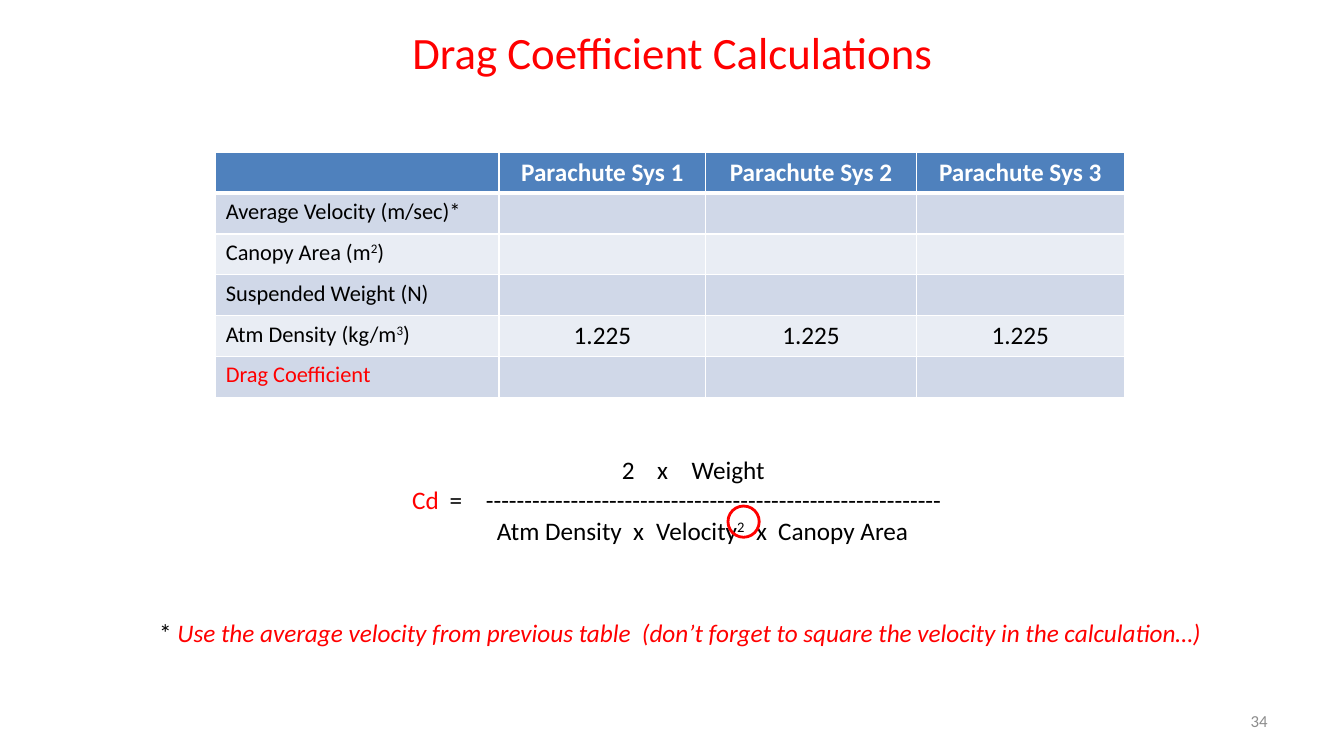
"""Build the drag coefficient calculation slide."""
from dataclasses import dataclass

import lxml.etree
import pptx
import pptx.dml.color
import pptx.enum.shapes
import pptx.enum.text
import pptx.oxml.ns
import pptx.util

Inches = pptx.util.Inches
Pt = pptx.util.Pt
RGBColor = pptx.dml.color.RGBColor
ALIGN = pptx.enum.text.PP_ALIGN
ANCHOR = pptx.enum.text.MSO_ANCHOR
qn = pptx.oxml.ns.qn

FONT = "Calibri"
RED = RGBColor(0xFF, 0x00, 0x00)
BLACK = RGBColor(0x00, 0x00, 0x00)
WHITE = RGBColor(0xFF, 0xFF, 0xFF)
GRAY = RGBColor(0x8C, 0x8C, 0x8C)
HEADER_BLUE = RGBColor(0x4F, 0x81, 0xBD)
BANDS = (RGBColor(0xE9, 0xED, 0xF4), RGBColor(0xD0, 0xD8, 0xE8))

COLUMN_WIDTHS = (2.81, 2.05, 2.09, 2.06)
ROW_HEIGHT = 0.405


@dataclass(frozen=True)
class Span:
    text: str
    color: RGBColor = BLACK
    size: float = 18
    bold: bool = False
    italic: bool = False
    raised: bool = False


@dataclass(frozen=True)
class Line:
    spans: tuple[Span, ...]
    align: ALIGN = ALIGN.LEFT
    tabs: tuple[float, ...] = ()
    hanging: float = 0


@dataclass(frozen=True)
class TextBox:
    left: float
    top: float
    width: float
    height: float
    lines: tuple[Line, ...]
    anchor: ANCHOR = ANCHOR.TOP


def label(text: str, exponent: str = "", color: RGBColor = BLACK) -> Line:
    """Return a row label, closing the bracket after any exponent."""
    spans = (Span(text, color, 16),)
    if exponent:
        spans += (Span(exponent, size=16, raised=True), Span(")", size=16))
    return Line(spans)


TEXT_BOXES = (
    TextBox(2.17, 0.17, 9, 0.69,
            (Line((Span("Drag Coefficient Calculations", RED, 32),), ALIGN.CENTER),),
            ANCHOR.MIDDLE),
    TextBox(9.56, 6.95, 3.11, 0.4,
            (Line((Span("34", GRAY, 12),), ALIGN.RIGHT),), ANCHOR.MIDDLE),
    TextBox(3.99, 4.46, 5.59, 1.01, (
        Line((Span("\t2\tx\tWeight"),), tabs=(2.08, 2.43, 2.77)),
        Line((Span("Cd", RED), Span("\t=\t" + "-" * 59)), tabs=(0.37, 0.73)),
        Line((Span("\tAtm Density\tx\tVelocity"), Span("2", raised=True),
              Span("\tx\tCanopy Area")), tabs=(0.84, 2.19, 2.42, 3.41, 3.63)),
    )),
    TextBox(1.48, 6.08, 11.18, 0.4, (
        Line((Span("* "),
              Span("Use the average velocity from previous table  (don’t forget "
                   "to square the velocity in the calculation…)", RED, italic=True)),
             hanging=0.19),
    )),
)

HEADINGS = tuple(
    Line((Span(f"Parachute Sys {number}", WHITE, bold=True),), ALIGN.CENTER)
    for number in (1, 2, 3)
)
DENSITY = Line((Span("1.225"),), ALIGN.CENTER)
EMPTY = Line(())
TABLE_ROWS = (
    (EMPTY, *HEADINGS),
    (label("Average Velocity (m/sec)*"), EMPTY, EMPTY, EMPTY),
    (label("Canopy Area (m", "2"), EMPTY, EMPTY, EMPTY),
    (label("Suspended Weight (N)"), EMPTY, EMPTY, EMPTY),
    (label("Atm Density (kg/m", "3"), DENSITY, DENSITY, DENSITY),
    (label("Drag Coefficient", color=RED), EMPTY, EMPTY, EMPTY),
)


def write_line(para, line: Line) -> None:
    """Fill one paragraph with the spans of a line."""
    para.alignment = line.align
    properties = para._p.get_or_add_pPr()
    if line.hanging:
        properties.set("marL", str(Inches(line.hanging)))
        properties.set("indent", str(-Inches(line.hanging)))
    if line.tabs:
        tab_list = lxml.etree.SubElement(properties, qn("a:tabLst"))
        for position in line.tabs:
            lxml.etree.SubElement(tab_list, qn("a:tab"),
                                  pos=str(Inches(position)), algn="l")
    for span in line.spans:
        run = para.add_run()
        run.text = span.text
        run.font.name = FONT
        run.font.size = Pt(span.size)
        run.font.bold = span.bold
        run.font.italic = span.italic
        run.font.color.rgb = span.color
        if span.raised:
            run.font._element.set("baseline", "30000")


def add_text_box(page, item: TextBox) -> None:
    """Add a wrapped text box."""
    box = page.shapes.add_textbox(Inches(item.left), Inches(item.top),
                                  Inches(item.width), Inches(item.height))
    frame = box.text_frame
    frame.word_wrap = True
    frame.vertical_anchor = item.anchor
    for index, line in enumerate(item.lines):
        write_line(frame.add_paragraph() if index else frame.paragraphs[0], line)


def set_borders(cell, row_number: int) -> None:
    """Draw white cell edges, thicker below the header row."""
    properties = cell._tc.get_or_add_tcPr()
    thick_edge = {0: "lnB", 1: "lnT"}.get(row_number)
    for edge in ("lnL", "lnR", "lnT", "lnB"):
        width = Pt(3 if edge == thick_edge else 1)
        border = lxml.etree.SubElement(properties, qn(f"a:{edge}"), w=str(width))
        fill = lxml.etree.SubElement(border, qn("a:solidFill"))
        lxml.etree.SubElement(fill, qn("a:srgbClr"), val=str(WHITE))


def add_drag_table(page) -> None:
    """Add the table of parachute systems."""
    row_count = len(TABLE_ROWS)
    table = page.shapes.add_table(
        row_count, len(COLUMN_WIDTHS), Inches(2.14), Inches(1.51),
        Inches(sum(COLUMN_WIDTHS)), Inches(ROW_HEIGHT * row_count)).table
    for column, width in zip(table.columns, COLUMN_WIDTHS):
        column.width = Inches(width)
    for row_number, lines in enumerate(TABLE_ROWS):
        table.rows[row_number].height = Inches(ROW_HEIGHT)
        for column_number, line in enumerate(lines):
            cell = table.cell(row_number, column_number)
            set_borders(cell, row_number)
            cell.fill.solid()
            cell.fill.fore_color.rgb = BANDS[row_number % 2] if row_number else HEADER_BLUE
            write_line(cell.text_frame.paragraphs[0], line)


def add_square_marker(page) -> None:
    """Circle the exponent of the velocity."""
    marker = page.shapes.add_shape(pptx.enum.shapes.MSO_SHAPE.OVAL, Inches(7.22),
                                   Inches(5.02), Inches(0.31), Inches(0.31))
    marker.shadow.inherit = False
    marker.fill.background()
    marker.line.color.rgb = RED
    marker.line.width = Pt(2)


def main() -> None:
    """Build and save the deck."""
    deck = pptx.Presentation()
    deck.slide_width = Inches(13.33)
    deck.slide_height = Inches(7.5)
    page = deck.slides.add_slide(deck.slide_layouts[6])
    add_drag_table(page)
    for item in TEXT_BOXES:
        add_text_box(page, item)
    add_square_marker(page)
    deck.save("out.pptx")


if __name__ == "__main__":
    main()
